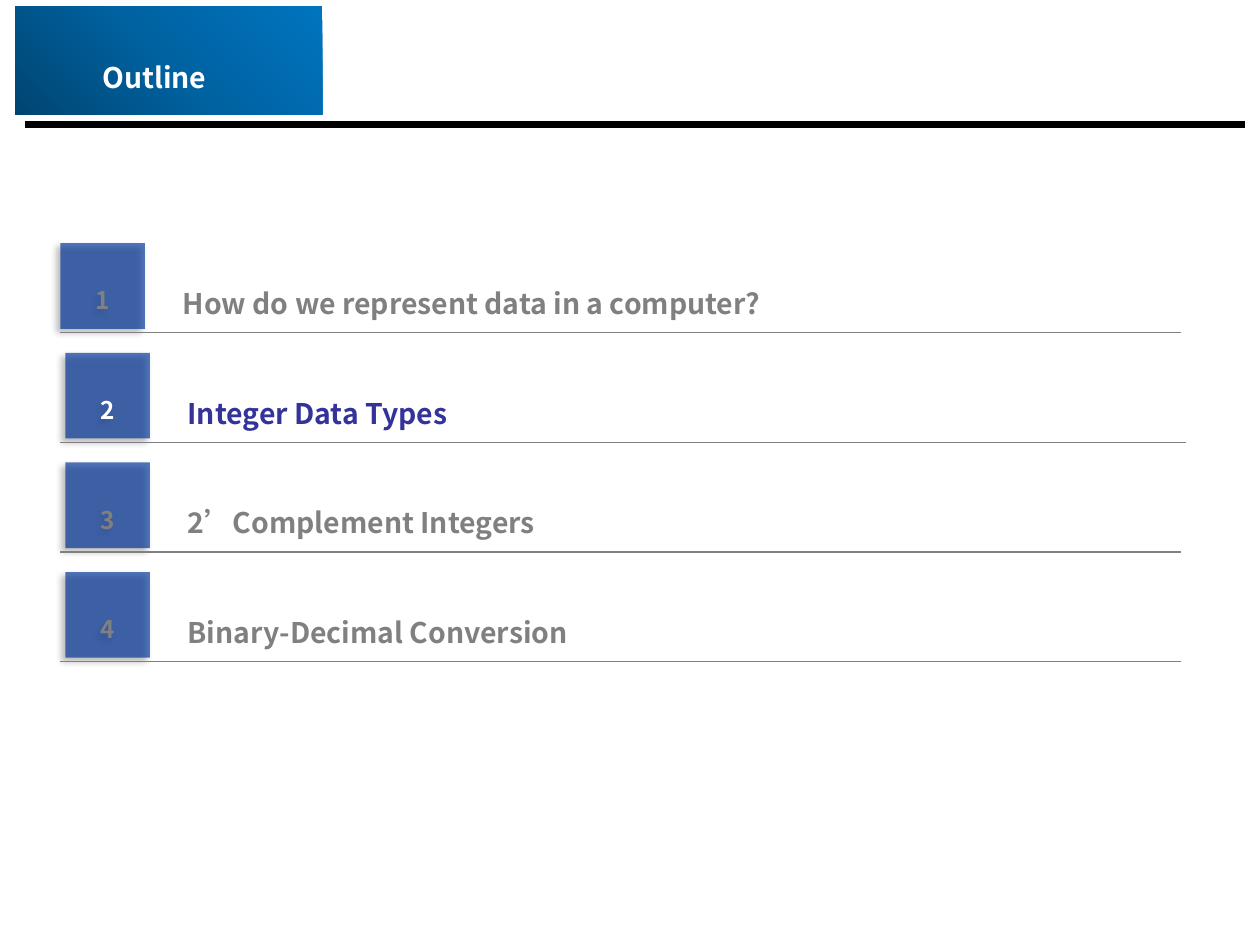
from dataclasses import dataclass

from lxml.etree import SubElement
from pptx import Presentation
from pptx.dml.color import RGBColor
from pptx.enum.shapes import MSO_CONNECTOR, MSO_SHAPE
from pptx.enum.text import MSO_ANCHOR, MSO_AUTO_SIZE, PP_ALIGN
from pptx.oxml.ns import qn
from pptx.util import Inches, Pt

FONT = "Noto Sans CJK SC"
GREY, WHITE, BLACK = "808080", "FFFFFF", "000000"
BADGE, NAVY = "003399", "333399"

# Grid: columns and rows one inch wide; list rows repeat at a fixed pitch
UNIT = Inches(1)
TOP, PITCH = 1.93, 0.87
SIDE, TALL = 0.67, 0.68
RULE = (0.48, 9.37)
SHIFT = 0.04


@dataclass
class Item:
    label: str
    ink: str = GREY
    mark: str = GREY
    left: float = 0.52
    width: float = 8.03
    twice: bool = False


ITEMS = [
    Item("How do we represent data in a computer?", left=0.48, width=8.55),
    Item("Integer Data Types", ink=NAVY, mark=WHITE, twice=True),
    Item("2’Complement Integers"),
    Item("Binary-Decimal Conversion"),
]


def paint(color, tone: str) -> None:
    color.rgb = RGBColor.from_string(tone)


def grid(*cells: float) -> list[int]:
    return [round(cell * UNIT) for cell in cells]


def node(parent, tag: str, **attrs):
    return SubElement(parent, qn(tag), {k: str(v) for k, v in attrs.items()})


def shade(effects) -> None:
    """Soft shadow falling down and to the left."""
    cast = node(effects, "a:outerShdw", blurRad=Pt(4), dist=Pt(3),
                dir=135 * 60000, algn="ctr", rotWithShape=0)
    tone = node(cast, "a:srgbClr", val=BLACK)
    node(tone, "a:alpha", val=40000)


def box(slide, *cells: float, fill: str = WHITE):
    shape = slide.shapes.add_shape(MSO_SHAPE.RECTANGLE, *grid(*cells))
    shape.shadow.inherit = False
    shape.fill.solid()
    paint(shape.fill.fore_color, fill)
    shape.line.fill.background()
    return shape


def write(shape, text: str, size: int, ink: str, align=PP_ALIGN.CENTER,
          pad: tuple = (0, 0), wrap: bool = True, grow: bool = True) -> None:
    """Lowered bold text, centred in height."""
    frame = shape.text_frame
    frame.text = text
    frame.word_wrap = wrap
    frame.vertical_anchor = MSO_ANCHOR.MIDDLE
    frame.margin_left = frame.margin_right = Inches(pad[0])
    frame.margin_top = frame.margin_bottom = Inches(pad[1])
    if grow:
        frame.auto_size = MSO_AUTO_SIZE.SHAPE_TO_FIT_TEXT
    para = frame.paragraphs[0]
    para.alignment = align
    run = para.runs[0]
    run.font.size, run.font.bold, run.font.name = Pt(size), True, FONT
    paint(run.font.color, ink)
    props = run._r.get_or_add_rPr()
    props.set("baseline", "-25000")
    node(props, "a:ea", typeface=FONT)


def rule(slide, start: float, end: float, row: float, tone: str,
         width: float, cast: bool = True) -> None:
    line = slide.shapes.add_connector(
        MSO_CONNECTOR.STRAIGHT, *grid(start, row, end, row))
    paint(line.line.color, tone)
    line.line.width = Pt(width)
    effects = node(line._element.spPr, "a:effectLst")
    if cast:
        shade(effects)


def blend(shape, stops: dict[int, str]) -> None:
    """Round gradient spreading from the lower left corner."""
    props = shape._element.spPr
    grad = node(props, "a:gradFill", rotWithShape=1)
    props.replace(props.find(qn("a:solidFill")), grad)
    group = node(grad, "a:gsLst")
    for place, tone in stops.items():
        stop = node(group, "a:gs", pos=place * 1000)
        node(stop, "a:srgbClr", val=tone)
    way = node(grad, "a:path", path="circle")
    node(way, "a:fillToRect", t=100000, r=100000)


def entry(slide, index: int, item: Item) -> None:
    top = TOP + index * PITCH
    # Number badge
    badge = box(slide, item.left, top, SIDE, TALL, fill=BADGE)
    tone = badge._element.spPr.find(qn("a:solidFill"))[0]
    node(tone, "a:alpha", val=67000)
    shade(badge._element.spPr.find(qn("a:effectLst")))
    write(badge, str(index + 1), 24, item.mark, wrap=False, grow=False)
    # Topic
    topic = box(slide, item.left + 0.86, top + 0.05, item.width, 0.59)
    write(topic, item.label, 28, item.ink, PP_ALIGN.LEFT, pad=(0.11, 0.06))
    # Line below
    start, end = RULE
    rule(slide, start, end, top + 0.71, GREY, 0.75)
    if item.twice:
        rule(slide, start + SHIFT, end + SHIFT, top + 0.71, GREY, 0.75)


def main() -> None:
    deck = Presentation()
    deck.slide_width, deck.slide_height = grid(10, 7.5)
    slide = deck.slides.add_slide(deck.slide_layouts[6])

    # Header
    rule(slide, 0.2, 9.88, 0.99, BLACK, 3.75, cast=False)
    banner = box(slide, 0.12, 0.05, 2.44, 0.86)
    blend(banner, {0: "004571", 50: "0062A1", 100: "0074BF"})
    title = slide.shapes.add_textbox(*grid(0.12, 0.25, 2.21, 0.47))
    write(title, "Outline", 28, WHITE)

    # Outline list
    for index, item in enumerate(ITEMS):
        entry(slide, index, item)

    deck.save("out.pptx")


if __name__ == "__main__":
    main()
